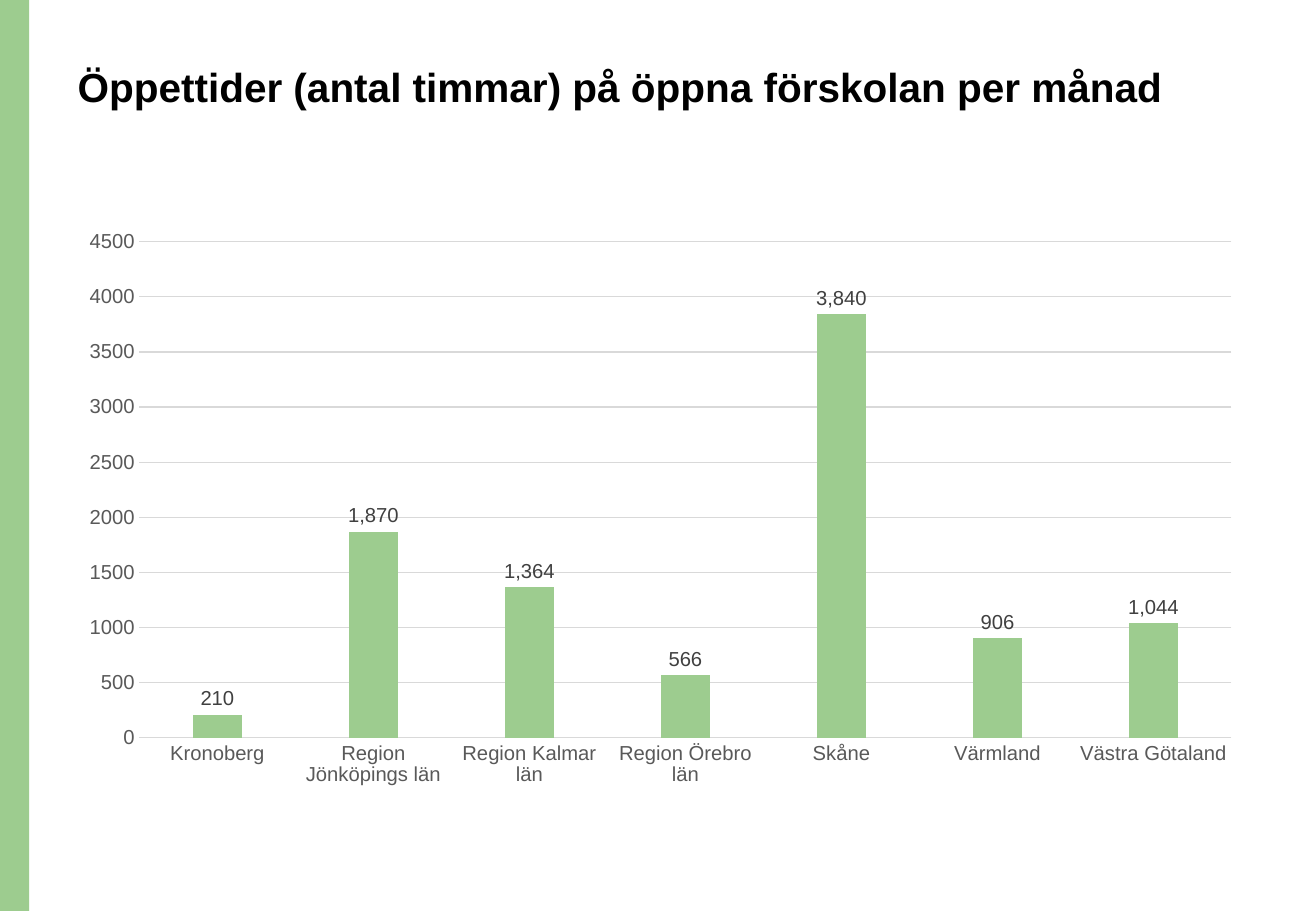
import lxml.etree
import pptx
import pptx.chart.data
import pptx.dml.color
import pptx.enum.chart
import pptx.enum.shapes
import pptx.enum.text
import pptx.oxml.ns
import pptx.util

Inches = pptx.util.Inches
RGBColor = pptx.dml.color.RGBColor

GREEN = RGBColor(0x9D, 0xCC, 0x8F)
BLACK = RGBColor(0x00, 0x00, 0x00)
AXIS_GREY = RGBColor(0x59, 0x59, 0x59)
LABEL_GREY = RGBColor(0x40, 0x40, 0x40)
GRID_GREY = RGBColor(0xD9, 0xD9, 0xD9)

OPENING_HOURS = {
    "Kronoberg": 210,
    "Region Jönköpings län": 1870,
    "Region Kalmar län": 1364,
    "Region Örebro län": 566,
    "Skåne": 3840,
    "Värmland": 906,
    "Västra Götaland": 1044,
}


def style_font(font, size, color, bold=False):
    font.name = "Arial"
    font.size = pptx.util.Pt(size)
    font.bold = bold
    font.color.rgb = color


def write_text(frame, text, size=12, color=BLACK, bold=False, line_spacing=1.0):
    para = frame.paragraphs[0]
    para.line_spacing = line_spacing
    span = para.add_run()
    span.text = text
    style_font(span.font, size, color, bold)


def style_line(line):
    line.color.rgb = GRID_GREY
    line.width = pptx.util.Pt(0.75)


class PageBuilder:
    def __init__(self, page, accent):
        self.page = page
        self.accent = accent

    def band(self, left, top, width, height):
        shape = self.page.shapes.add_shape(
            pptx.enum.shapes.MSO_SHAPE.RECTANGLE,
            Inches(left), Inches(top), Inches(width), Inches(height))
        shape.shadow.inherit = False
        shape.fill.solid()
        shape.fill.fore_color.rgb = self.accent
        shape.line.fill.background()

    def title(self, text, left, top, width, height):
        box = self.page.shapes.add_textbox(
            Inches(left), Inches(top), Inches(width), Inches(height))
        frame = box.text_frame
        frame.word_wrap = True
        frame.vertical_anchor = pptx.enum.text.MSO_ANCHOR.TOP
        write_text(frame, text, size=24, bold=True, line_spacing=0.9)

    def column_chart(self, values, left, top, width, height):
        data = pptx.chart.data.CategoryChartData()
        data.categories = list(values)
        data.add_series("Series 1", list(values.values()))
        chart = self.page.shapes.add_chart(
            pptx.enum.chart.XL_CHART_TYPE.COLUMN_CLUSTERED,
            Inches(left), Inches(top), Inches(width), Inches(height), data).chart
        chart.has_title = False
        chart.has_legend = False
        style_font(chart.font, 10, BLACK)
        self.style_axes(chart)
        self.style_columns(chart.plots[0])
        self.place_plot(chart, x=0.062, y=0.038, w=0.918, h=0.858)

    def style_axes(self, chart):
        for axis in (chart.category_axis, chart.value_axis):
            axis.major_tick_mark = pptx.enum.chart.XL_TICK_MARK.NONE
            axis.minor_tick_mark = pptx.enum.chart.XL_TICK_MARK.NONE
            style_font(axis.tick_labels.font, 12, AXIS_GREY)
        style_line(chart.category_axis.format.line)
        value_axis = chart.value_axis
        value_axis.minimum_scale = 0
        value_axis.maximum_scale = 4500
        value_axis.major_unit = 500
        value_axis.format.line.fill.background()
        style_line(value_axis.major_gridlines.format.line)

    def style_columns(self, plot):
        plot.gap_width = 219
        plot.overlap = -27
        plot.vary_by_categories = False
        fill = plot.series[0].format.fill
        fill.solid()
        fill.fore_color.rgb = self.accent
        labels = plot.series[0].data_labels
        labels.show_value = True
        labels.position = pptx.enum.chart.XL_LABEL_POSITION.OUTSIDE_END
        labels.number_format = "#,##0"
        labels.number_format_is_linked = False
        style_font(labels.font, 12, LABEL_GREY)

    def place_plot(self, chart, **fractions):
        qn = pptx.oxml.ns.qn
        area = chart.plots[0]._element.getparent()
        for old_layout in area.findall(qn("c:layout")):
            area.remove(old_layout)
        layout = lxml.etree.Element(qn("c:layout"))
        manual = lxml.etree.SubElement(layout, qn("c:manualLayout"))
        settings = {"layoutTarget": "inner", "xMode": "edge", "yMode": "edge", **fractions}
        for name, value in settings.items():
            lxml.etree.SubElement(manual, qn("c:" + name)).set("val", str(value))
        area.insert(0, layout)


def main():
    deck = pptx.Presentation()
    deck.slide_width = Inches(10.83)
    deck.slide_height = Inches(7.5)
    page = deck.slides.add_slide(deck.slide_layouts[6])
    builder = PageBuilder(page, GREEN)
    builder.band(0, 0, 0.24, 7.5)
    builder.title("Öppettider (antal timmar) på öppna förskolan per månad",
                  0.54, 0.51, 9.71, 0.99)
    builder.column_chart(OPENING_HOURS, 0.54, 1.81, 9.79, 4.76)
    deck.save("out.pptx")


if __name__ == "__main__":
    main()
